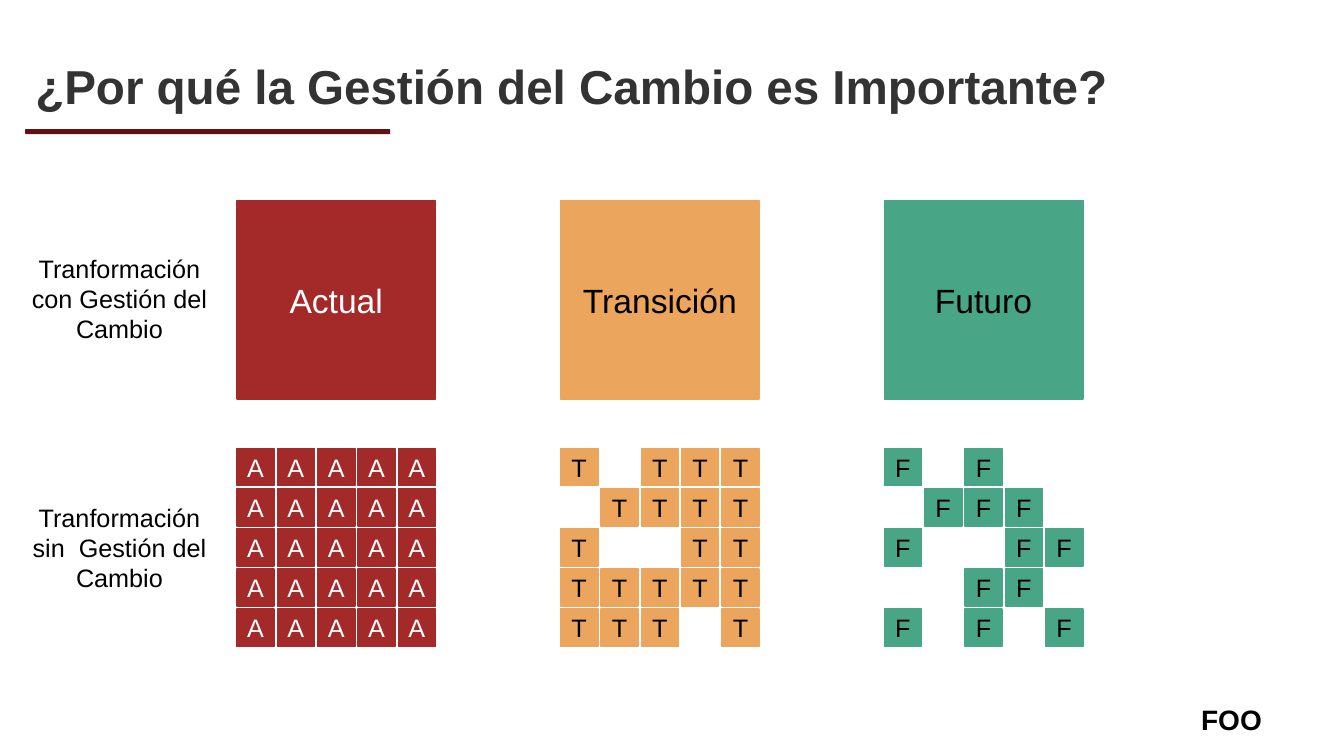
from pptx import Presentation
from pptx.dml.color import RGBColor
from pptx.enum.shapes import MSO_SHAPE as Shape
from pptx.enum.text import MSO_ANCHOR as Anchor, MSO_AUTO_SIZE as AutoSize, PP_ALIGN as Align
from pptx.util import Inches, Pt

RED = RGBColor(0xA4, 0x29, 0x29)
ORANGE = RGBColor(0xEB, 0xA5, 0x5C)
GREEN = RGBColor(0x48, 0xA6, 0x86)
MAROON = RGBColor(0x61, 0x11, 0x12)
CHARCOAL = RGBColor(0x33, 0x33, 0x33)
BLACK = RGBColor(0, 0, 0)
WHITE = RGBColor(0xFF, 0xFF, 0xFF)

# Grid of 0.1 inch columns and rows
MODULE = Inches(0.1)
STAGE_LEFT, STAGE_PITCH, STAGE_SIZE = 23.5, 32.1, 19.7
WHOLE_TOP, PIECES_TOP = 19.9, 44.5
PIECE_SIZE, PIECE_COL, PIECE_ROW = 3.7, 4, 3.98

# Stage name, fill, text colour and the places its pieces take
STAGES = [
    ("Actual", RED, WHITE, ["XXXXX"] * 5),
    ("Transición", ORANGE, BLACK, ["X.XXX", ".XXXX", "X..XX", "XXXXX", "XXX.X"]),
    ("Futuro", GREEN, BLACK, ["X.X..", ".XXX.", "X..XX", "..XX.", "X.X.X"]),
]
ROW_LABELS = [
    ("Tranformación con Gestión del Cambio", 24.6),
    ("Tranformación sin  Gestión del Cambio", 49.3),
]


class Board:
    """Holds the slide, its font and its grid."""

    def __init__(self, slide, font="Arial"):
        self.slide = slide
        self.font = font

    def place(self, *cells):
        return [round(cell * MODULE) for cell in cells]

    def set_text(self, frame, text, size, color, bold=False, align=Align.CENTER):
        frame.text = text
        frame.word_wrap = True
        paragraph = frame.paragraphs[0]
        paragraph.alignment = align
        font = paragraph.runs[0].font
        font.name, font.size, font.bold = self.font, Pt(size), bold
        font.color.rgb = color
        return paragraph

    def title(self, text, *cells):
        heading = self.slide.shapes.title
        heading.left, heading.top, heading.width, heading.height = self.place(*cells)
        frame = heading.text_frame
        frame.auto_size = AutoSize.NONE
        frame.vertical_anchor = Anchor.BOTTOM
        self.set_text(frame, text, 34, CHARCOAL, True, Align.LEFT).line_spacing = 0.9

    def label(self, text, size, *cells, bold=False):
        box = self.slide.shapes.add_textbox(*self.place(*cells))
        self.set_text(box.text_frame, text, size, BLACK, bold)
        box.text_frame.auto_size = AutoSize.SHAPE_TO_FIT_TEXT

    def bar(self, color, *cells):
        rule = self.slide.shapes.add_shape(Shape.ROUNDED_RECTANGLE, *self.place(*cells))
        rule.shadow.inherit = False
        rule.fill.solid()
        rule.fill.fore_color.rgb = color
        rule.line.fill.background()

    def group(self):
        return self.slide.shapes.add_group_shape()

    def tile(self, group, text, size, fill, ink, left, top, side):
        square = group.shapes.add_shape(Shape.RECTANGLE, *self.place(left, top, side, side))
        square.shadow.inherit = False
        square.fill.solid()
        square.fill.fore_color.rgb = fill
        square.line.color.rgb = fill
        square.line.width = Pt(1)
        frame = square.text_frame
        frame.margin_left = frame.margin_right = frame.margin_top = frame.margin_bottom = 0
        frame.vertical_anchor = Anchor.MIDDLE
        self.set_text(frame, text, size, ink)


def main():
    deck = Presentation()
    deck.slide_width, deck.slide_height = Inches(13.33), Inches(7.5)
    board = Board(deck.slides.add_slide(deck.slide_layouts[5]))

    # Heading, underline and footer mark
    board.title("¿Por qué la Gestión del Cambio es Importante?", 2.5, 2.5, 108.9, 9.4)
    board.bar(MAROON, 2.5, 12.8, 36.2, 0.5)
    board.label("FOO", 20, 112.3, 69.2, 19.7, 4.4, bold=True)

    # Whole stages above, the same stages in pieces below
    whole, pieces = board.group(), board.group()
    for index, (name, fill, ink, pattern) in enumerate(STAGES):
        left = STAGE_LEFT + index * STAGE_PITCH
        board.tile(whole, name, 24, fill, ink, left, WHOLE_TOP, STAGE_SIZE)
        for row, marks in enumerate(pattern):
            for col, mark in enumerate(marks):
                if mark == "X":
                    board.tile(pieces, name[0], 18, fill, ink, left + col * PIECE_COL,
                               PIECES_TOP + row * PIECE_ROW, PIECE_SIZE)

    # Row labels
    for text, top in ROW_LABELS:
        board.label(text, 18, 1, top, 21.7, 10.1)

    deck.save("out.pptx")


if __name__ == "__main__":
    main()
